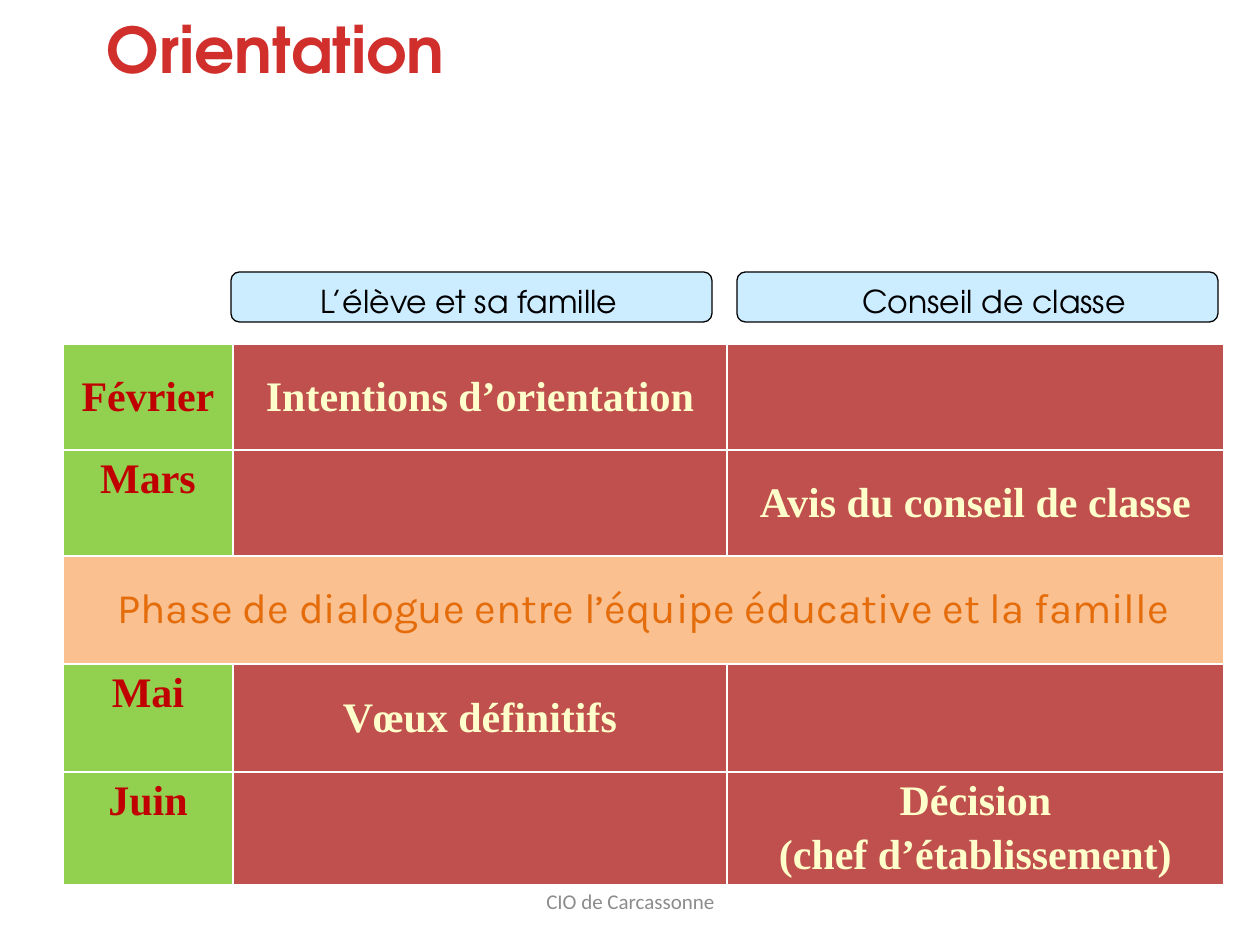
from lxml.etree import SubElement
from pptx import Presentation
from pptx.dml.color import RGBColor
from pptx.enum.shapes import MSO_SHAPE as Shape
from pptx.enum.text import MSO_ANCHOR as Anchor, PP_ALIGN as Align
from pptx.oxml.ns import qn
from pptx.util import Pt

EMU_PER_PX = 914400 / 126
TITLE_FONT = "TeX Gyre Adventor"
TABLE_FONT = "Times New Roman"
GREEN, RED, ORANGE = "92D050", "C0504D", "FAC090"
DARK_RED, CREAM = "C00000", "FFFFCC"

# month, whether it is centred vertically, family step, class council step
STEPS_BEFORE = [
    ("Février", True, "Intentions d’orientation", ""),
    ("Mars", False, "", "Avis du conseil de classe"),
]
STEPS_AFTER = [
    ("Mai", False, "Vœux définitifs", ""),
    ("Juin", False, "", "Décision\n(chef d’établissement)"),
]
DIALOGUE = "Phase de dialogue entre l’équipe éducative et la famille"


def px(length):
    return round(length * EMU_PER_PX)


def box_px(*lengths):
    return [px(length) for length in lengths]


def color(value):
    return RGBColor.from_string(value)


def write(frame, text, *, size, font, fill, bold=False, align=Align.CENTER,
          space_before=0):
    """Put one paragraph per line of text into a text frame."""
    frame.word_wrap = True
    for index, line in enumerate(text.split("\n")):
        paragraph = frame.add_paragraph() if index else frame.paragraphs[0]
        paragraph.alignment = align
        paragraph.space_before = Pt(space_before if index else 0)
        run = paragraph.add_run()
        run.text = line
        run.font.size = Pt(size)
        run.font.name = font
        run.font.bold = bold
        run.font.color.rgb = color(fill)


def add_label(slide, box, text, **text_format):
    label = slide.shapes.add_textbox(*box_px(*box))
    label.text_frame.vertical_anchor = Anchor.MIDDLE
    write(label.text_frame, text, **text_format)


def add_title(slide, box, text):
    title = slide.shapes.title
    title.left, title.top, title.width, title.height = box_px(*box)
    title.text_frame.vertical_anchor = Anchor.MIDDLE
    write(title.text_frame, text, size=36, font=TITLE_FONT, fill="D02F2C",
          bold=True, align=Align.LEFT)


def add_column_header(slide, box, text, text_offset):
    left, top, width, height = box
    shape = slide.shapes.add_shape(Shape.FLOWCHART_ALTERNATE_PROCESS, *box_px(*box))
    shape.shadow.inherit = False
    shape.fill.solid()
    shape.fill.fore_color.rgb = color("CCECFF")
    shape.line.color.rgb = color("000000")
    shape.line.width = Pt(0.75)
    add_label(slide, (left + text_offset, top + 3, 462, height + 1), text,
              size=18, font=TITLE_FONT, fill="000000")


def add_borders(cell, line_color, width):
    properties = cell._tc.get_or_add_tcPr()
    for side in ("a:lnL", "a:lnR", "a:lnT", "a:lnB"):
        line = SubElement(properties, qn(side), w=str(Pt(width)))
        fill = SubElement(line, qn("a:solidFill"))
        SubElement(fill, qn("a:srgbClr"), val=line_color)


def fill_cell(cell, background, text="", anchor=Anchor.MIDDLE, *, fill=CREAM,
              font=TABLE_FONT, bold=True):
    add_borders(cell, "FFFFFF", 1)
    cell.fill.solid()
    cell.fill.fore_color.rgb = color(background)
    cell.vertical_anchor = anchor
    if text:
        write(cell.text_frame, text, size=24, font=font, fill=fill, bold=bold,
              space_before=4)


def add_calendar(slide, left, top, column_widths, row_heights):
    frame = slide.shapes.add_table(
        len(row_heights), len(column_widths),
        *box_px(left, top, sum(column_widths), sum(row_heights)))
    table = frame.table
    table.first_row = table.horz_banding = False
    for column, width in zip(table.columns, column_widths):
        column.width = px(width)
    for row, height in zip(table.rows, row_heights):
        row.height = px(height)

    dialogue_row = len(STEPS_BEFORE)
    for index, step in enumerate(STEPS_BEFORE + [None] + STEPS_AFTER):
        if step is None:
            continue
        month, centred, family, council = step
        anchor = Anchor.MIDDLE if centred else Anchor.TOP
        fill_cell(table.cell(index, 0), GREEN, month, anchor, fill=DARK_RED)
        fill_cell(table.cell(index, 1), RED, family)
        fill_cell(table.cell(index, 2), RED, council)

    dialogue = table.cell(dialogue_row, 0)
    dialogue.merge(table.cell(dialogue_row, len(column_widths) - 1))
    fill_cell(dialogue, ORANGE, DIALOGUE, fill="E46C0A", font="Karla", bold=False)


def main():
    presentation = Presentation()
    presentation.slide_width, presentation.slide_height = box_px(1260, 945)
    slide = presentation.slides.add_slide(presentation.slide_layouts[5])
    add_title(slide, (94, 0, 1072, 96), "Orientation")
    add_calendar(slide, 63, 344, (170, 494, 497), (106, 106, 108, 108, 106))
    add_column_header(slide, (231, 272, 481, 50), "L’élève et sa famille", 7)
    add_column_header(slide, (737, 272, 481, 50), "Conseil de classe", 26)
    add_label(slide, (431, 876, 399, 50), "CIO de Carcassonne",
              size=12, font="Calibri", fill="8C8C8C")
    presentation.save("out.pptx")


if __name__ == "__main__":
    main()
